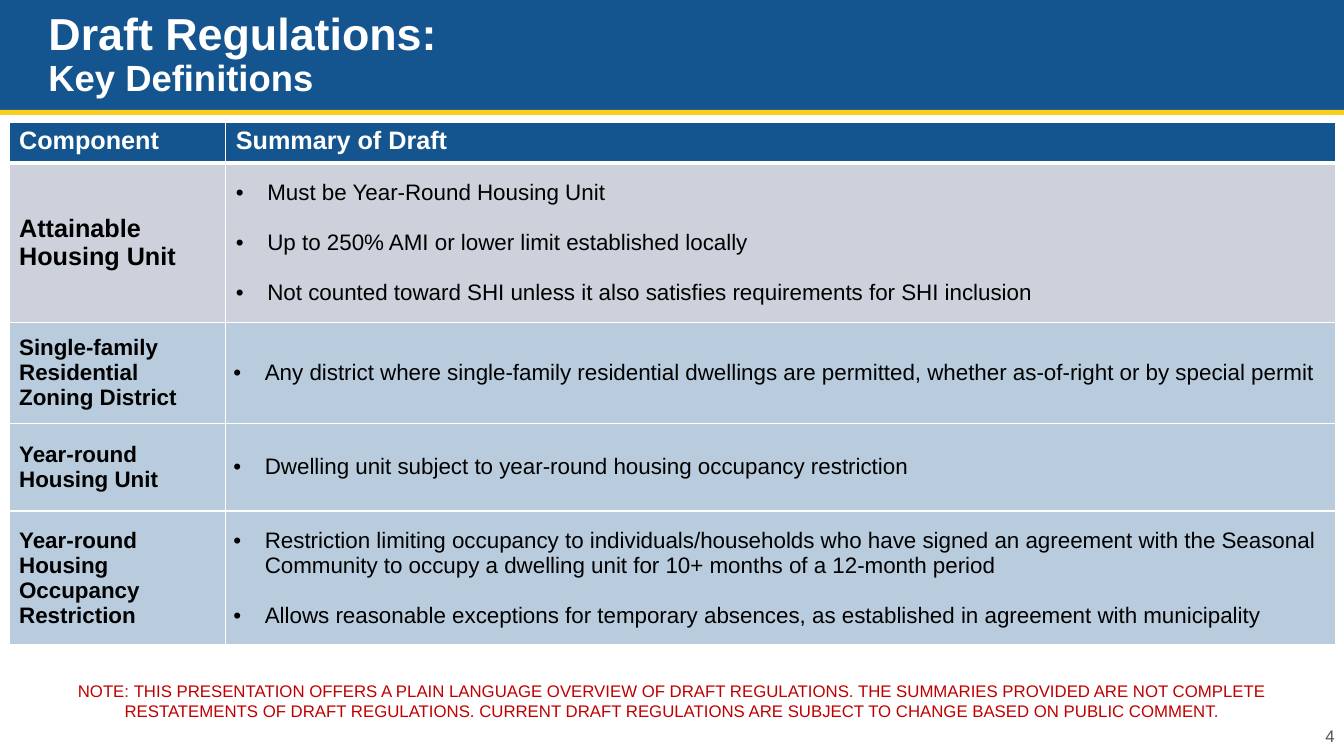
import pptx
import pptx.dml.color
import pptx.enum.shapes
import pptx.enum.text
import pptx.oxml.ns
import pptx.util
from lxml import etree

Pt = pptx.util.Pt
ALIGN = pptx.enum.text.PP_ALIGN
MIDDLE = pptx.enum.text.MSO_ANCHOR.MIDDLE
TOP = pptx.enum.text.MSO_ANCHOR.TOP
qn = pptx.oxml.ns.qn

COLORS = {
    "blue": "14558F", "yellow": "F9CE20", "white": "FFFFFF", "black": "000000",
    "gray_row": "CCD1DB", "blue_row": "B9CCDD", "red": "C00000", "number": "535353",
}


def rgb(name):
    return pptx.dml.color.RGBColor.from_string(COLORS[name])


def format_runs(paragraph, size, color, bold=False):
    for run in paragraph.runs:
        run.font.name = "Arial"
        run.font.size = Pt(size)
        run.font.bold = bold
        run.font.color.rgb = rgb(color)


presentation = pptx.Presentation()
presentation.slide_width = Pt(960)
presentation.slide_height = Pt(540)
slide = presentation.slides.add_slide(presentation.slide_layouts[5])

# Header band and its yellow rule
for top, height, color in [(0, 79.2, "blue"), (78.5, 3.6, "yellow")]:
    band = slide.shapes.add_shape(
        pptx.enum.shapes.MSO_SHAPE.RECTANGLE, 0, Pt(top), Pt(960), Pt(height))
    band.shadow.inherit = False
    band.fill.solid()
    band.fill.fore_color.rgb = rgb(color)
    band.line.fill.background()

# Title, brought in front of the band
title = slide.shapes.title
slide.shapes._spTree.append(title._element)
title.left, title.top, title.width, title.height = Pt(27.4), 0, Pt(828), Pt(79.2)
title.text_frame.text = "Draft Regulations: \vKey Definitions"
title.text_frame.auto_size = pptx.enum.text.MSO_AUTO_SIZE.NONE
title.text_frame.vertical_anchor = MIDDLE
heading = title.text_frame.paragraphs[0]
heading.alignment = ALIGN.LEFT
heading.line_spacing = 0.9
format_runs(heading, 32, "white", True)
heading.runs[1].font.size = Pt(26)

# Definitions: row height, fill, size of the component name, name, summary points
DEFINITIONS = [
    (113.8, "gray_row", 18, "Attainable Housing Unit", [
        "Must be Year-Round Housing Unit",
        "Up to 250% AMI or lower limit established locally",
        "Not counted toward SHI unless it also satisfies requirements for SHI inclusion"]),
    (72, "blue_row", 16, "Single-family Residential Zoning District", [
        "Any district where single-family residential dwellings are permitted, "
        "whether as-of-right or by special permit"]),
    (62.6, "blue_row", 16, "Year-round Housing Unit", [
        "Dwelling unit subject to year-round housing occupancy restriction"]),
    (95.8, "blue_row", 16, "Year-round Housing Occupancy Restriction", [
        "Restriction limiting occupancy to individuals/households who have signed an "
        "agreement with the Seasonal Community to occupy a dwelling unit for 10+ months "
        "of a 12-month period",
        "Allows reasonable exceptions for temporary absences, as established in "
        "agreement with municipality"]),
]
HEADER = (29.5, "blue", 18, "Component", ["Summary of Draft"])

table = slide.shapes.add_table(
    len(DEFINITIONS) + 1, 2, Pt(6.5), Pt(87.1), Pt(947.5), Pt(373.7)).table
table.horz_banding = False
table.columns[0].width = Pt(154.8)
table.columns[1].width = Pt(792.7)

for row_index, (height, fill, name_size, name, points) in enumerate([HEADER] + DEFINITIONS):
    is_header = row_index == 0
    table.rows[row_index].height = Pt(height)
    for column, text in enumerate([name, "\n".join(points)]):
        cell = table.cell(row_index, column)
        cell.text_frame.text = text
        cell.vertical_anchor = TOP if is_header else MIDDLE
        if column == 1 and row_index > 1:
            cell.margin_left = cell.margin_right = Pt(5.4)
            cell.margin_top = cell.margin_bottom = 0

        # White borders, thicker below the header
        properties = cell._tc.get_or_add_tcPr()
        for side in ("lnL", "lnR", "lnT", "lnB"):
            thick = (is_header and side == "lnB") or (row_index == 1 and side == "lnT")
            line = etree.SubElement(properties, qn("a:" + side), w=str(Pt(3 if thick else 1)))
            solid = etree.SubElement(line, qn("a:solidFill"))
            etree.SubElement(solid, qn("a:srgbClr"), val=COLORS["white"])
        cell.fill.solid()
        cell.fill.fore_color.rgb = rgb(fill)

        # Text, with bullets in the summary column
        bulleted = column == 1 and not is_header
        for index, paragraph in enumerate(cell.text_frame.paragraphs):
            if bulleted:
                bullet = paragraph._p.get_or_add_pPr()
                bullet.set("marL", str(Pt(22.5)))
                bullet.set("indent", str(-Pt(22.5)))
                etree.SubElement(bullet, qn("a:buFont"), typeface="Arial")
                etree.SubElement(bullet, qn("a:buChar"), char="•")
                if index > 0:
                    paragraph.space_before = Pt(18)
            format_runs(paragraph, 16 if bulleted else name_size,
                        "white" if is_header else "black", not bulleted)

# Note and slide number
NOTE = ("NOTE:\u00a0THIS PRESENTATION OFFERS A PLAIN LANGUAGE OVERVIEW OF DRAFT REGULATIONS. "
        "THE SUMMARIES PROVIDED ARE NOT COMPLETE RESTATEMENTS OF DRAFT REGULATIONS. "
        "CURRENT DRAFT REGULATIONS ARE\u00a0SUBJECT TO CHANGE BASED ON PUBLIC COMMENT.")
for left, top, width, height, text, color, alignment in [
    (6.5, 460.8, 947.5, 79.2, NOTE, "red", ALIGN.CENTER),
    (744.5, 511.2, 216, 28.8, "4", "number", ALIGN.RIGHT),
]:
    box = slide.shapes.add_textbox(Pt(left), Pt(top), Pt(width), Pt(height))
    box.text_frame.word_wrap = True
    box.text_frame.vertical_anchor = MIDDLE
    box.text_frame.text = text
    paragraph = box.text_frame.paragraphs[0]
    paragraph.alignment = alignment
    format_runs(paragraph, 12, color)

presentation.save("out.pptx")
